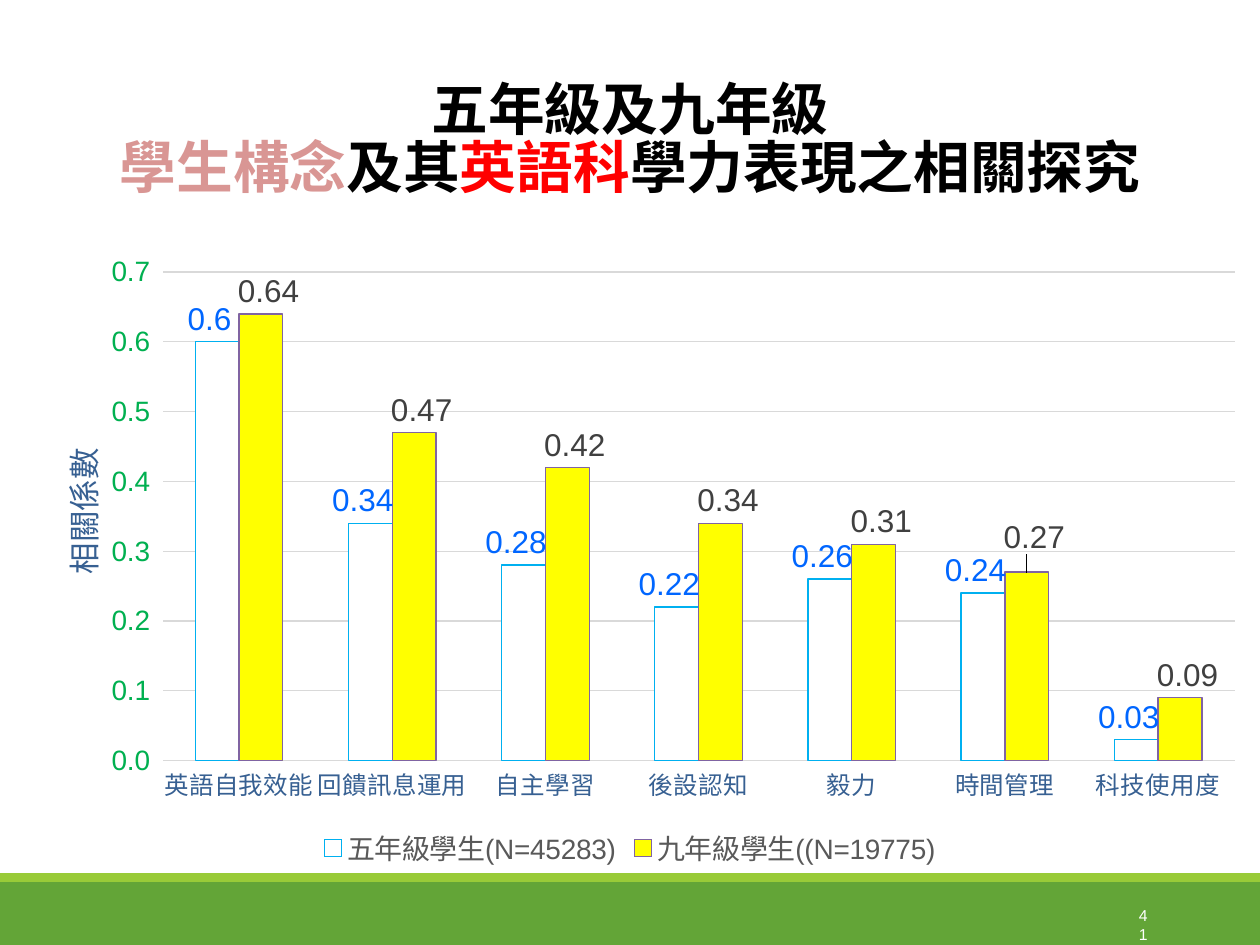
from collections import namedtuple
from dataclasses import dataclass

import pptx
import pptx.chart.data
import pptx.dml.color
import pptx.enum.chart
import pptx.enum.shapes
import pptx.enum.text
import pptx.oxml
import pptx.oxml.ns
import pptx.util

Pt = pptx.util.Pt
Box = namedtuple("Box", "left top width height")
Series = namedtuple("Series", "name values fill line label shift")


@dataclass(frozen=True)
class Theme:
    """Colours, fonts and type sizes of the slide."""
    latin: str = "Arial"
    title_font: str = "Noto Sans CJK SC"
    axis_font: str = "Noto Sans CJK TC"
    black: str = "000000"
    white: str = "FFFFFF"
    rose: str = "D99694"
    red: str = "FF0000"
    green: str = "63A537"
    lime: str = "99CB38"
    navy: str = "376092"
    scale: str = "00B050"
    grid: str = "D9D9D9"
    legend: str = "595959"
    title_size: float = 32.4
    label_size: float = 18
    scale_size: float = 16
    category_size: float = 14
    number_size: float = 9


THEME = Theme()
TITLE_LINES = [
    [("五年級及九年級", THEME.black)],
    [("學生構念", THEME.rose), ("及其", THEME.black),
     ("英語科", THEME.red), ("學力表現之相關探究", THEME.black)],
]
CATEGORIES = ["英語自我效能", "回饋訊息運用", "自主學習", "後設認知",
              "毅力", "時間管理", "科技使用度"]
SERIES = [
    Series("五年級學生(N=45283)", [0.6, 0.34, 0.28, 0.22, 0.26, 0.24, 0.03],
           "FFFFFF", "00B0F0", "0066FF", -0.006),
    Series("九年級學生((N=19775)", [0.64, 0.47, 0.42, 0.34, 0.31, 0.27, 0.09],
           "FFFF00", "8064A2", "404040", 0.006),
]
LABEL_RISES = {(1, 5): -0.02}


def color(value):
    """Turn a hex string into a colour."""
    return pptx.dml.color.RGBColor.from_string(value)


def style(font, size, value, name=THEME.latin, bold=False):
    """Set the size, colour, face and weight of a font."""
    font.size, font.name, font.bold = Pt(size), name, bold
    font.color.rgb = color(value)


def add_span(para, text, size, value, name=THEME.latin, bold=False):
    """Append a styled run, with its face also used for East Asian text."""
    span = para.add_run()
    span.text = text
    style(span.font, size, value, name, bold)
    east = pptx.oxml.parse_xml(
        f'<a:ea {pptx.oxml.ns.nsdecls("a")} typeface="{name}"/>')
    span.font._element.find(pptx.oxml.ns.qn("a:latin")).addnext(east)


def manual_layout(**parts):
    """Make a chart layout element from its parts."""
    inner = "".join(f'<c:{key} val="{value}"/>' for key, value in parts.items())
    return pptx.oxml.parse_xml(
        f'<c:layout {pptx.oxml.ns.nsdecls("c")}>'
        f"<c:manualLayout>{inner}</c:manualLayout></c:layout>")


def set_layout(parent, after, **parts):
    """Replace the layout of a chart part, placing it after a sibling."""
    for old in parent.findall(pptx.oxml.ns.qn("c:layout")):
        parent.remove(old)
    layout = manual_layout(**parts)
    if after is None:
        parent.insert(0, layout)
    else:
        parent.find(pptx.oxml.ns.qn(after)).addnext(layout)


def place(shape, box):
    """Move a shape into a box given in points."""
    shape.left, shape.top, shape.width, shape.height = map(Pt, box)


def add_footer(slide, box, stripe):
    """Draw the green footer with its lighter stripe on top."""
    parts = [(box.top + stripe, box.height - stripe, THEME.green),
             (box.top, stripe, THEME.lime)]
    for top, height, fill in parts:
        band = slide.shapes.add_shape(
            pptx.enum.shapes.MSO_SHAPE.RECTANGLE,
            Pt(box.left), Pt(top), Pt(box.width), Pt(height))
        band.shadow.inherit = False
        band.fill.solid()
        band.fill.fore_color.rgb = color(fill)
        band.line.fill.background()


def add_title(slide, box):
    """Fill the title placeholder with the two coloured lines."""
    title = slide.shapes.title
    place(title, box)
    frame = title.text_frame
    frame.word_wrap = True
    frame.auto_size = pptx.enum.text.MSO_AUTO_SIZE.NONE
    frame.vertical_anchor = pptx.enum.text.MSO_ANCHOR.MIDDLE
    para = frame.paragraphs[0]
    para.alignment = pptx.enum.text.PP_ALIGN.CENTER
    para.line_spacing = 0.85
    for index, line in enumerate(TITLE_LINES):
        if index:
            para.add_line_break()
        for text, value in line:
            add_span(para, text, THEME.title_size, value, THEME.title_font, True)


def style_axes(chart):
    """Format the category axis and the value axis with its title."""
    for axis, size, value in [
            (chart.category_axis, THEME.category_size, THEME.navy),
            (chart.value_axis, THEME.scale_size, THEME.scale)]:
        axis.major_tick_mark = pptx.enum.chart.XL_TICK_MARK.NONE
        axis.minor_tick_mark = pptx.enum.chart.XL_TICK_MARK.NONE
        axis.format.line.fill.background()
        style(axis.tick_labels.font, size, value)
    axis = chart.value_axis
    axis.minimum_scale, axis.maximum_scale, axis.major_unit = 0, 0.7, 0.1
    axis.tick_labels.number_format = "0.0_ "
    axis.tick_labels.number_format_is_linked = False
    axis.major_gridlines.format.line.color.rgb = color(THEME.grid)
    axis.major_gridlines.format.line.width = Pt(0.75)
    para = axis.axis_title.text_frame.paragraphs[0]
    add_span(para, "相關係數", THEME.label_size, THEME.navy, THEME.axis_font)
    set_layout(axis.axis_title._element, "c:tx",
               xMode="edge", yMode="edge", x=0.04, y=0.315)


def style_series(bars, number, series):
    """Colour one set of bars and shift its value labels sideways."""
    bars.format.fill.solid()
    bars.format.fill.fore_color.rgb = color(series.fill)
    bars.format.line.color.rgb = color(series.line)
    bars.format.line.width = Pt(0.75)
    bars.invert_if_negative = False
    labels = bars.data_labels
    labels.show_value = True
    labels.position = pptx.enum.chart.XL_LABEL_POSITION.OUTSIDE_END
    style(labels.font, THEME.label_size, series.label)
    for index in range(len(series.values)):
        label = bars.points[index].data_label
        label.position = pptx.enum.chart.XL_LABEL_POSITION.OUTSIDE_END
        style(label.font, THEME.label_size, series.label)
    for index, element in enumerate(labels._element.findall(pptx.oxml.ns.qn("c:dLbl"))):
        set_layout(element, "c:idx", x=series.shift,
                   y=LABEL_RISES.get((number, index), 0))


def add_correlation_chart(slide, box):
    """Add the clustered columns of correlation coefficients."""
    data = pptx.chart.data.CategoryChartData()
    data.categories = CATEGORIES
    for series in SERIES:
        data.add_series(series.name, series.values)
    chart = slide.shapes.add_chart(
        pptx.enum.chart.XL_CHART_TYPE.COLUMN_CLUSTERED, *map(Pt, box), data).chart
    chart.has_title = False
    style(chart.font, 10, THEME.black)
    plot = chart.plots[0]
    plot.gap_width, plot.overlap, plot.vary_by_categories = 150, 0, False
    style_axes(chart)
    for number, (bars, series) in enumerate(zip(plot.series, SERIES)):
        style_series(bars, number, series)
    chart.has_legend = True
    chart.legend.position = pptx.enum.chart.XL_LEGEND_POSITION.BOTTOM
    chart.legend.include_in_layout = False
    style(chart.legend.font, THEME.scale_size, THEME.legend)
    area = chart._chartSpace.find(".//" + pptx.oxml.ns.qn("c:plotArea"))
    set_layout(area, None, layoutTarget="inner", xMode="edge", yMode="edge",
               x=0.129, y=0.044, w=0.851, h=0.777)


def add_page_number(slide, box):
    """Write the page number in the footer."""
    frame = slide.shapes.add_textbox(*map(Pt, box)).text_frame
    frame.word_wrap = True
    para = frame.paragraphs[0]
    para.alignment = pptx.enum.text.PP_ALIGN.RIGHT
    add_span(para, "41", THEME.number_size, THEME.white)


def main():
    """Build the slide and save the deck."""
    deck = pptx.Presentation()
    deck.slide_width, deck.slide_height = Pt(720), Pt(540)
    slide = deck.slides.add_slide(deck.slide_layouts[5])
    add_footer(slide, Box(0, 499, 720, 41), 5)
    add_title(slide, Box(0, 42, 720, 78.5))
    add_correlation_chart(slide, Box(0, 139.7, 720, 359.3))
    add_page_number(slide, Box(643.7, 514, 18, 18))
    deck.save("out.pptx")


if __name__ == "__main__":
    main()
